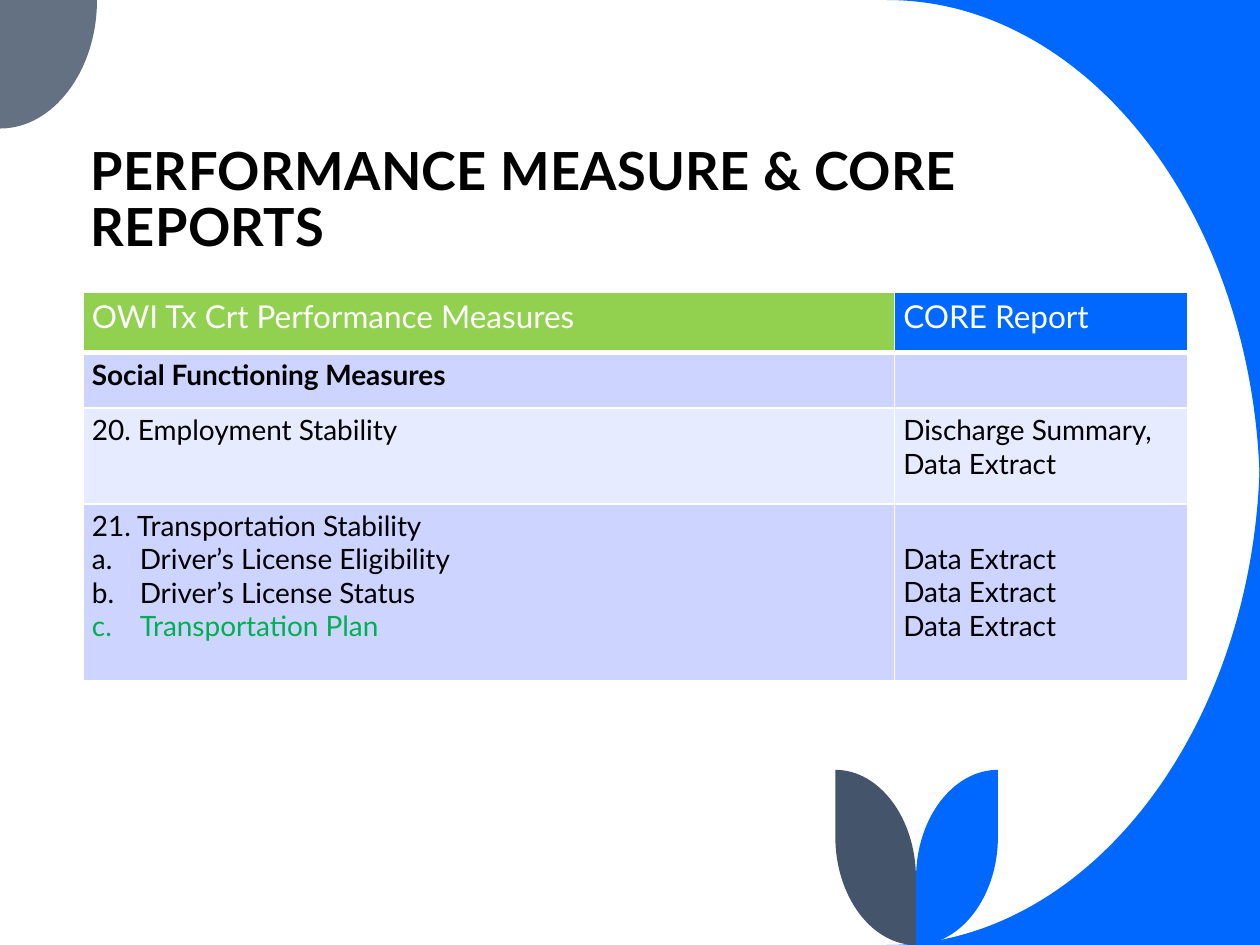
from lxml import etree
from pptx import Presentation
from pptx.dml.color import RGBColor
from pptx.enum.text import MSO_ANCHOR, PP_ALIGN
from pptx.oxml.ns import qn
from pptx.util import Inches, Pt

BOTTOM, LEFT = MSO_ANCHOR.BOTTOM, PP_ALIGN.LEFT
FONT = "Lato"
BLUE, SLATE, GRAY = "0068FF", "44546A", "637183"
GREEN, LIME = "00B050", "92D050"
BLACK, WHITE = "000000", "FFFFFF"
BAND_DARK, BAND_LIGHT = "CCD4FF", "E7EBFF"
SLIDE_WIDTH, SLIDE_HEIGHT = 10, 7.5
ARC_RATIO = 0.55


def color(value):
    return RGBColor.from_string(value)


def set_font(paragraph, size, value, bold=False):
    font = paragraph.font
    font.name, font.size, font.bold = FONT, Pt(size), bold
    font.color.rgb = color(value)


def quarter_arc(start, corner, end):
    handles = [
        tuple(a + ARC_RATIO * (b - a) for a, b in zip(point, corner))
        for point in (start, end)
    ]
    return [*handles, end]


def add_outline(slide, start, segments, fill):
    points = [(Inches(x), Inches(y)) for segment in segments for x, y in segment]
    builder = slide.shapes.build_freeform(Inches(start[0]), Inches(start[1]))
    builder.add_line_segments(points, close=True)
    shape = builder.convert_to_shape()
    lines = iter(list(shape._element.iter(qn("a:lnTo"))))
    for segment in segments:
        group = [next(lines) for point in segment]
        if len(group) == 3:
            curve = etree.Element(qn("a:cubicBezTo"))
            group[0].addprevious(curve)
            for line in group:
                curve.append(line[0])
                line.getparent().remove(line)
    shape.shadow.inherit = False
    shape.fill.solid()
    shape.fill.fore_color.rgb = color(fill)
    shape.line.fill.background()


def add_corner(slide, start, bend, end, corner, fill):
    add_outline(slide, start, [quarter_arc(start, bend, end), [corner]], fill)


def add_leaf(slide, stem, tip, top, bottom, fill):
    side = 0.53
    tip_top, tip_low = (tip, top), (tip, top + side)
    stem_low, stem_high = (stem, bottom), (stem, bottom - side)
    segments = [
        [tip_low],
        quarter_arc(tip_low, (tip, bottom), stem_low),
        [stem_high],
        quarter_arc(stem_high, (stem, top), tip_top),
    ]
    add_outline(slide, tip_top, segments, fill)


def add_decoration(slide):
    left, wedge_height = 7.04, 3.95
    for edge, middle in ((0, wedge_height),
                         (SLIDE_HEIGHT, SLIDE_HEIGHT - wedge_height)):
        corner = (SLIDE_WIDTH, edge)
        add_corner(slide, (left, edge), corner, (SLIDE_WIDTH, middle), corner, BLUE)
    width, height = 0.77, 1.02
    add_corner(slide, (width, 0), (width, height), (0, height), (0, 0), GRAY)
    for tip, fill in ((7.92, BLUE), (6.63, SLATE)):
        add_leaf(slide, 7.27, tip, 6.11, SLIDE_HEIGHT, fill)


def add_title(slide, left, top, width, height):
    title = slide.shapes.title
    title.left, title.top = Inches(left), Inches(top)
    title.width, title.height = Inches(width), Inches(height)
    frame = title.text_frame
    frame.text = "PERFORMANCE MEASURE & CORE REPORTS"
    frame.word_wrap = True
    frame.vertical_anchor = BOTTOM
    paragraph = frame.paragraphs[0]
    paragraph.alignment = LEFT
    paragraph.line_spacing = 0.9
    set_font(paragraph, 30, BLACK, bold=True)
    paragraph.runs[0].font._element.set("spc", "20")


def set_header_borders(cell):
    properties = cell._tc.get_or_add_tcPr()
    widths = {"a:lnL": 1, "a:lnR": 1, "a:lnT": 1, "a:lnB": 3}
    for index, (tag, width) in enumerate(widths.items()):
        line = etree.Element(qn(tag), w=str(Pt(width)))
        fill = etree.SubElement(line, qn("a:solidFill"))
        etree.SubElement(fill, qn("a:srgbClr"), val=WHITE)
        properties.insert(index, line)


def set_letter_bullet(paragraph):
    properties = paragraph._p.get_or_add_pPr()
    properties.set("marL", str(Inches(0.38)))
    properties.set("indent", str(-Inches(0.38)))
    bullet = etree.Element(qn("a:buAutoNum"), type="alphaLcPeriod")
    properties.insert(0, bullet)


def fill_cell(cell, lines, fill, size, text_color, bold=False):
    cell.fill.solid()
    cell.fill.fore_color.rgb = color(fill)
    cell.margin_left = cell.margin_right = Inches(0.07)
    cell.margin_top = cell.margin_bottom = Inches(0.04)
    if lines:
        cell.text = "\n".join(lines)
        for paragraph in cell.text_frame.paragraphs:
            set_font(paragraph, size, text_color, bold)


def add_measures_table(slide, left, top, width, height):
    row_heights = (0.48, 0.44, 0.76, 1.4)
    measure_width = 6.44
    table = slide.shapes.add_table(
        len(row_heights), 2, Inches(left), Inches(top), Inches(width), Inches(height)
    ).table
    table.columns[0].width = Inches(measure_width)
    table.columns[1].width = Inches(width - measure_width)
    for row, row_height in zip(table.rows, row_heights):
        row.height = Inches(row_height)

    headers = (("OWI Tx Crt Performance Measures", LIME), ("CORE Report", BLUE))
    for column, (text, fill) in enumerate(headers):
        cell = table.cell(0, column)
        fill_cell(cell, [text], fill, 18, WHITE)
        set_header_borders(cell)

    transportation = ["21. Transportation Stability", "Driver’s License Eligibility",
                      "Driver’s License Status", "Transportation Plan"]
    body = (
        (["Social Functioning Measures"], [], BAND_DARK, True),
        (["20. Employment Stability"], ["Discharge Summary, Data Extract"],
         BAND_LIGHT, False),
        (transportation, ["Data Extract"] * 3, BAND_DARK, False),
    )
    for row, (measures, reports, fill, bold) in enumerate(body, start=1):
        for column, lines in enumerate((measures, reports)):
            fill_cell(table.cell(row, column), lines, fill, 16, BLACK, bold)

    items = table.cell(3, 0).text_frame.paragraphs[1:]
    for paragraph in items:
        set_letter_bullet(paragraph)
    items[-1].font.color.rgb = color(GREEN)
    table.cell(3, 1).margin_top = Inches(0.3)


def main():
    presentation = Presentation()
    presentation.slide_width = Inches(SLIDE_WIDTH)
    presentation.slide_height = Inches(SLIDE_HEIGHT)
    slide = presentation.slides.add_slide(presentation.slide_layouts[5])
    add_decoration(slide)
    add_title(slide, 0.62, 1.33, 8.77, 0.77)
    add_measures_table(slide, 0.66, 2.32, 8.77, 3.07)
    presentation.save("out.pptx")


if __name__ == "__main__":
    main()
